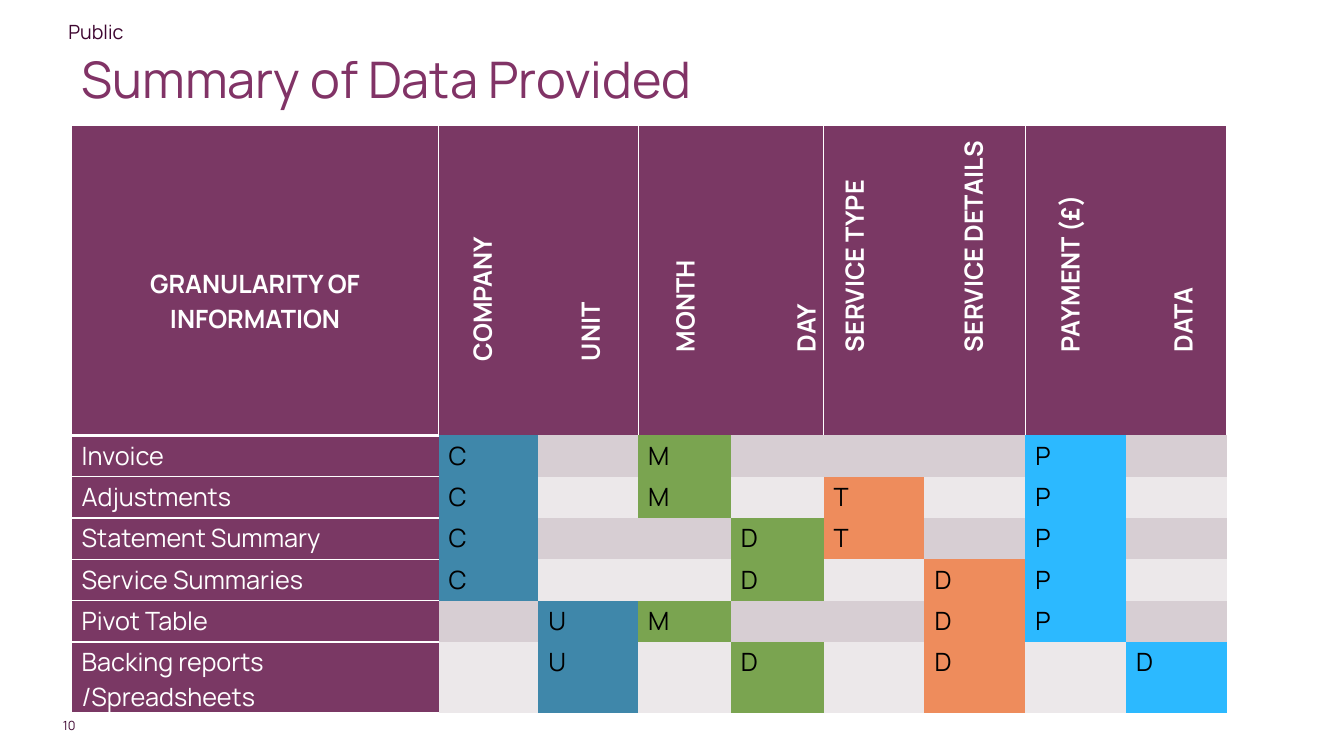
from lxml import etree
from pptx import Presentation
from pptx import util as u
from pptx.dml.color import RGBColor
from pptx.enum import text
from pptx.oxml.ns import qn

FONT = "Manrope"
COLORS = {
    "white": "FFFFFF", "black": "000000", "ink": "3F0731", "title": "813366",
    "plum": "7A3864", "band_dark": "D7CED3", "band_light": "ECE8EA",
    "teal": "3F87AA", "green": "7AA450", "orange": "EE8C5C", "blue": "2CB9FF",
}
NO_STYLE = "{2D5ABB26-0587-4C30-8999-92F81FD0307C}"

CORNER_LABEL = "GRANULARITY OF INFORMATION"
# One colour for each pair of columns
GROUPS = ["teal", "green", "orange", "blue"]
# Row label, then the mark in each of the eight columns ("." is empty)
ROWS = [
    ("Invoice", "C.M...P."),
    ("Adjustments", "C.M.T.P."),
    ("Statement Summary", "C..DT.P."),
    ("Service Summaries", "C..D.DP."),
    ("Pivot Table", ".UM..DP."),
    ("Backing reports /Spreadsheets", ".U.D.D.D"),
]
# Column heading, centre x, length, lower end y (inches)
HEADINGS = [
    ("COMPANY", 4.78, 1.96, 3.68),
    ("UNIT", 5.85, 1.49, 3.68),
    ("MONTH", 6.79, 1.49, 3.59),
    ("DAY", 7.99, 1.49, 3.59),
    ("SERVICE TYPE", 8.47, 2.16, 3.59),
    ("SERVICE DETAILS", 9.65, 2.49, 3.59),
    ("PAYMENT (£)", 10.61, 2.49, 3.59),
    ("DATA", 11.73, 2.49, 3.59),
]
TABLE_LEFT, TABLE_TOP = 0.71, 1.24
COL_WIDTHS = [3.64, 0.99, 0.99, 0.92, 0.92, 1, 1, 1, 1]
ROW_HEIGHTS = [3.08] + [0.41] * 5 + [0.7]
HEADING_HEIGHT = 0.4


def rgb(name):
    return RGBColor.from_string(COLORS[name])


def add_run(p, words, size, color, bold=False):
    r = p.add_run()
    r.text = words
    r.font.name, r.font.size, r.font.bold = FONT, u.Pt(size), bold
    r.font.color.rgb = rgb(color)


def add_label(slide, box, words, size, color, bold=False, inset=(0.1, 0.05),
              anchor=text.MSO_ANCHOR.TOP, wrap=True):
    sp = slide.shapes.add_textbox(*(u.Inches(v) for v in box))
    tf = sp.text_frame
    tf.word_wrap, tf.vertical_anchor = wrap, anchor
    tf.margin_left = tf.margin_right = u.Inches(inset[0])
    tf.margin_top = tf.margin_bottom = u.Inches(inset[1])
    add_run(tf.paragraphs[0], words, size, color, bold)
    return sp


def fill_cell(cell, color, borders=None):
    """Fill a cell; borders maps a side (L, R, T, B) to a white line's points."""
    cell.margin_top, cell.margin_bottom = u.Inches(0.03), 0
    tc_pr = cell._tc.get_or_add_tcPr()
    for side in "LRTB":
        if side in (borders or {}):
            ln = etree.SubElement(tc_pr, qn(f"a:ln{side}"), w=str(u.Pt(borders[side])))
            solid = etree.SubElement(ln, qn("a:solidFill"))
            etree.SubElement(solid, qn("a:srgbClr"), val=COLORS["white"])
    cell.fill.solid()
    cell.fill.fore_color.rgb = rgb(color)


def add_summary_table(slide):
    frame = slide.shapes.add_table(
        len(ROW_HEIGHTS), len(COL_WIDTHS), u.Inches(TABLE_LEFT), u.Inches(TABLE_TOP),
        u.Inches(sum(COL_WIDTHS)), u.Inches(sum(ROW_HEIGHTS)))
    table = frame.table
    table._tbl.tblPr.find(qn("a:tableStyleId")).text = NO_STYLE
    for column, width in zip(table.columns, COL_WIDTHS):
        column.width = u.Inches(width)
    for row, height in zip(table.rows, ROW_HEIGHTS):
        row.height = u.Inches(height)

    corner = table.cell(0, 0)
    fill_cell(corner, "plum", {"L": 1, "R": 1, "T": 1, "B": 3})
    corner.margin_top = u.Inches(1.41)
    p = corner.text_frame.paragraphs[0]
    p.alignment = text.PP_ALIGN.CENTER
    add_run(p, CORNER_LABEL, 18, "white", True)
    for g in range(len(GROUPS)):
        first = 1 + 2 * g
        table.cell(0, first).merge(table.cell(0, first + 1))
        fill_cell(table.cell(0, first), "plum", {"L": 1, "R": 1, "T": 1})

    for i, (label, marks) in enumerate(ROWS, 1):
        head = table.cell(i, 0)
        fill_cell(head, "plum", {"L": 1, "T": 3 if i == 1 else 1, "B": 1})
        add_run(head.text_frame.paragraphs[0], label, 18, "white")
        band = "band_dark" if i % 2 else "band_light"
        for j, mark in enumerate(marks):
            cell = table.cell(i, j + 1)
            p = cell.text_frame.paragraphs[0]
            if mark == ".":
                fill_cell(cell, band)
                p.font.size = u.Pt(18)
            else:
                fill_cell(cell, GROUPS[j // 2])
                add_run(p, mark, 18, "black")


def main():
    prs = Presentation()
    prs.slide_width, prs.slide_height = u.Inches(13.33), u.Inches(7.5)
    s = prs.slides.add_slide(prs.slide_layouts[6])

    number = add_label(s, (0.57, 7.12, 0.18, 0.15), "10", 9, "ink", inset=(0, 0),
                       anchor=text.MSO_ANCHOR.MIDDLE, wrap=False)
    number.text_frame.paragraphs[0].alignment = text.PP_ALIGN.RIGHT
    add_label(s, (0.58, 0.15, 5, 0.34), "Public", 14, "ink")
    add_summary_table(s)
    for words, center, length, bottom in HEADINGS:
        box = (center - length / 2, bottom - length / 2 - HEADING_HEIGHT / 2,
               length, HEADING_HEIGHT)
        add_label(s, box, words, 18, "white", True).rotation = 270
    add_label(s, (TABLE_LEFT, 0.36, 9.7, 0.83), "Summary of Data Provided", 36, "title",
              inset=(0.1, 0.1), anchor=text.MSO_ANCHOR.MIDDLE)
    prs.save("out.pptx")


if __name__ == "__main__":
    main()
